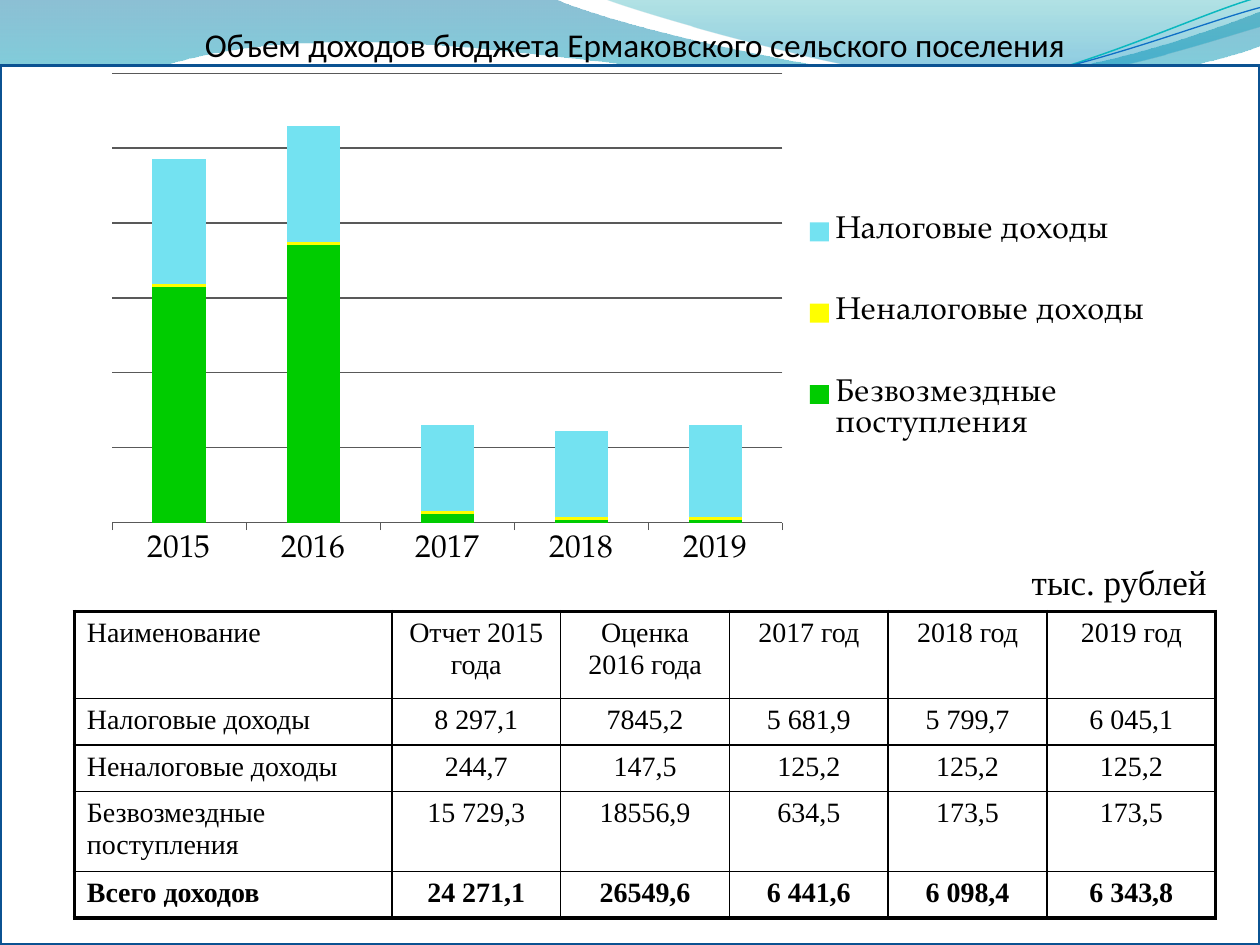
from dataclasses import dataclass
from math import cos, radians, sin
from typing import Optional

from lxml import etree
from pptx import Presentation
from pptx.chart.data import CategoryChartData
from pptx.dml.color import RGBColor
from pptx.enum.chart import XL_CHART_TYPE, XL_LEGEND_POSITION, XL_TICK_LABEL_POSITION, XL_TICK_MARK
from pptx.enum.shapes import MSO_SHAPE
from pptx.enum.text import MSO_ANCHOR, PP_ALIGN
from pptx.oxml import parse_xml
from pptx.oxml.ns import nsdecls, qn
from pptx.util import Pt

STACKED = XL_CHART_TYPE.COLUMN_STACKED
LEGEND_RIGHT = XL_LEGEND_POSITION.RIGHT
LABELS_LOW = XL_TICK_LABEL_POSITION.LOW
TICK_OUTSIDE = XL_TICK_MARK.OUTSIDE
RECTANGLE = MSO_SHAPE.RECTANGLE
MIDDLE, TOP = MSO_ANCHOR.MIDDLE, MSO_ANCHOR.TOP
LEFT, CENTER = PP_ALIGN.LEFT, PP_ALIGN.CENTER

BLACK = RGBColor(0x00, 0x00, 0x00)
WHITE = RGBColor(0xFF, 0xFF, 0xFF)
FRAME_BLUE = RGBColor(0x0B, 0x52, 0x92)
TEAL = RGBColor(0x0A, 0xB8, 0xBF)
BLUE = RGBColor(0x0F, 0x6F, 0xC6)
GRID_GREY = RGBColor(0x59, 0x59, 0x59)
GREEN = RGBColor(0x00, 0xCC, 0x00)
YELLOW = RGBColor(0xFF, 0xFF, 0x00)
SKY = RGBColor(0x73, 0xE2, 0xF1)
SERIF = "Times New Roman"

Point = tuple[float, float]
TILT = -2.7


@dataclass
class Wave:
    """An outline whose segments hold one point (a line) or three (a Bezier curve)."""
    bounds: tuple[float, float, float, float]
    start: Point
    segments: list[tuple[Point, ...]]
    stops: tuple[tuple[int, str, int], ...] = ()
    line: Optional[RGBColor] = None
    width: float = 0


@dataclass
class IncomeSeries:
    name: str
    values: list[int]
    color: RGBColor


WAVES = [
    Wave((-0.7, -0.7, 721.4, 82.1), (0, -0.7), [
        ((316.8, -0.7),),
        ((342.7, 12.2), (478.1, 45.4), (545.8, 45.4)),
        ((614.2, 45.4), (689.8, 18.7), (720, 6.5)),
        ((720.7, 25.9),),
        ((707.8, 31.7), (626.4, 54.7), (537.1, 54)),
        ((447.8, 54), (275, 20.2), (185, 24.5)),
        ((92.9, 25.2), (33.1, 59.8), (-0.7, 81.4)),
    ], stops=((0, "0074A1", 45), (100, "00C6CF", 55))),
    Wave((344.9, -0.7, 375.1, 50.4), (344.9, -0.7), [
        ((366.5, 7.9), (491, 44.6), (553.7, 46.8)),
        ((616.3, 49.7), (691.9, 23), (720, 15.1)),
        ((720, 0),),
    ], stops=((0, "00A1A9", 30), (80, "008BBF", 45))),
    Wave((-1.4, 15.8, 721.4, 51.1), (0, 79.9), [
        ((34.6, 67), (113.8, 41), (199.4, 37.4)),
        ((284.4, 33.8), (427, 64.1), (513.4, 57.6)),
        ((599.8, 51.1), (675.4, 10.8), (718.6, -1.4)),
    ], line=TEAL, width=0.85),
    Wave((-1.4, 21.6, 722.2, 41.8), (0, 74.9), [
        ((33.8, 69.1), (118.1, 43.9), (203.8, 40.3)),
        ((290.2, 36.7), (429.8, 59.8), (516.2, 54)),
        ((601.9, 48.2), (679, 15.1), (720, 4.3)),
    ], line=BLUE, width=0.75),
]

INCOME = [
    ["Наименование", "Отчет 2015 года", "Оценка 2016 года", "2017 год", "2018 год", "2019 год"],
    ["Налоговые доходы", "8 297,1", "7845,2", "5 681,9", "5 799,7", "6 045,1"],
    ["Неналоговые доходы", "244,7", "147,5", "125,2", "125,2", "125,2"],
    ["Безвозмездные поступления", "15 729,3", "18556,9", "634,5", "173,5", "173,5"],
    ["Всего доходов", "24 271,1", "26549,6", "6 441,6", "6 098,4", "6 343,8"],
]
COLUMN_WIDTHS = [181.4, 96.5, 96.5, 90.7, 90.7, 96.5]
ROW_HEIGHTS = [49.7, 26.6, 26.6, 45.4, 26.6]

YEARS = ["2015", "2016", "2017", "2018", "2019"]
SERIES = [
    IncomeSeries("Безвозмездные поступления", [85, 100, 3, 1, 1], GREEN),
    IncomeSeries("Неналоговые доходы", [1, 1, 1, 1, 1], YELLOW),
    IncomeSeries("Налоговые доходы", [45, 42, 31, 31, 33], SKY),
]


def turn(point: Point, pivot: Point, degrees: float) -> Point:
    angle = radians(degrees)
    dx, dy = point[0] - pivot[0], point[1] - pivot[1]
    return (pivot[0] + dx * cos(angle) - dy * sin(angle),
            pivot[1] + dx * sin(angle) + dy * cos(angle))


def draw_wave(slide, wave: Wave) -> None:
    """Open a freeform on the bounds, then give its path the curved segments."""
    left, top, width, height = wave.bounds
    builder = slide.shapes.build_freeform(Pt(left), Pt(top), scale=1.0)
    builder.add_line_segments([(Pt(left + width), Pt(top + height))], close=False)
    outline = builder.convert_to_shape()
    outline.shadow.inherit = False
    properties = outline.element.spPr
    curve = properties.find(".//" + qn("a:path"))
    for command in list(curve):
        curve.remove(command)
    pivot = (left + width / 2, top + height / 2)
    untilt = 0 if wave.line is None else -TILT

    def add_command(tag: str, points: tuple[Point, ...]) -> None:
        command = etree.SubElement(curve, qn(f"a:{tag}"))
        for point in points:
            x, y = turn(point, pivot, untilt)
            etree.SubElement(command, qn("a:pt"), x=str(Pt(x - left)), y=str(Pt(y - top)))

    add_command("moveTo", (wave.start,))
    for segment in wave.segments:
        add_command("lnTo" if len(segment) == 1 else "cubicBezTo", segment)
    if wave.line is not None:
        outline.rotation = TILT
        outline.fill.background()
        outline.line.color.rgb = wave.line
        outline.line.width = Pt(wave.width)
        return
    add_command("close", ())
    outline.line.fill.background()
    stops = "".join(
        f'<a:gs pos="{pos * 1000}"><a:srgbClr val="{color}">'
        f'<a:alpha val="{alpha * 1000}"/></a:srgbClr></a:gs>' for pos, color, alpha in wave.stops)
    properties.find(qn("a:custGeom")).addnext(parse_xml(
        f'<a:gradFill {nsdecls("a")} rotWithShape="1"><a:gsLst>{stops}</a:gsLst>'
        '<a:lin ang="5400000" scaled="1"/></a:gradFill>'))


def write(frame, text: str, size: float, font: str, align=LEFT, bold: bool = False) -> None:
    paragraph = frame.paragraphs[0]
    paragraph.alignment = align
    run = paragraph.add_run()
    run.text = text
    run.font.size, run.font.name, run.font.bold = Pt(size), font, bold
    run.font.color.rgb = BLACK


def add_label(slide, box: tuple[float, ...], text: str, size: float, font: str,
              align=LEFT, anchor=TOP, side_inset: float = 7.2, bottom_inset: float = 3.6) -> None:
    frame = slide.shapes.add_textbox(*map(Pt, box)).text_frame
    frame.word_wrap = True
    frame.vertical_anchor = anchor
    frame.margin_left = frame.margin_right = Pt(side_inset)
    frame.margin_bottom = Pt(bottom_inset)
    write(frame, text, size, font, align)


def set_borders(cell, widths: dict[str, float]) -> None:
    properties = cell._tc.get_or_add_tcPr()
    for index, (side, width) in enumerate(widths.items()):
        properties.insert(index, parse_xml(
            f'<a:ln{side} {nsdecls("a")} w="{Pt(width)}"><a:solidFill>'
            f'<a:srgbClr val="{BLACK}"/></a:solidFill></a:ln{side}>'))


def add_income_table(slide) -> None:
    table = slide.shapes.add_table(len(INCOME), len(COLUMN_WIDTHS), Pt(42.5), Pt(349.5),
                                   Pt(sum(COLUMN_WIDTHS)), Pt(sum(ROW_HEIGHTS))).table
    table.first_row = table.horz_banding = False
    for column, width in zip(table.columns, COLUMN_WIDTHS):
        column.width = Pt(width)
    last_row, last_column = len(INCOME) - 1, len(COLUMN_WIDTHS) - 1
    for r, (values, height) in enumerate(zip(INCOME, ROW_HEIGHTS)):
        table.rows[r].height = Pt(height)
        for c, value in enumerate(values):
            cell = table.cell(r, c)
            cell.fill.background()
            write(cell.text_frame, value, 16, SERIF, CENTER if c else LEFT, r == last_row)
            outer = {"L": c == 0, "R": c == last_column, "T": r == 0, "B": r == last_row}
            set_borders(cell, {side: 2.25 if edge else 1 for side, edge in outer.items()})


def set_layout(element, index: int, x: float, y: float, w: float, h: float, target: str) -> None:
    """Place a chart part by fractions of the chart; the layout becomes its child at index."""
    for old in element.findall(qn("c:layout")):
        element.remove(old)
    layout = etree.Element(qn("c:layout"))
    manual = etree.SubElement(layout, qn("c:manualLayout"))
    settings = {"layoutTarget": target} if target else {}
    settings |= {"xMode": "edge", "yMode": "edge", "x": x, "y": y, "w": w, "h": h}
    for tag, value in settings.items():
        etree.SubElement(manual, qn(f"c:{tag}")).set("val", str(value))
    element.insert(index, layout)


def add_income_chart(slide) -> None:
    data = CategoryChartData()
    data.categories = YEARS
    for income in SERIES:
        data.add_series(income.name, income.values)
    chart = slide.shapes.add_chart(STACKED, Pt(51.8), Pt(36), Pt(617.8), Pt(295.2), data).chart
    chart.has_title = False
    chart.font.name, chart.font.size = "TeX Gyre Pagella", Pt(18)
    chart.font.color.rgb = BLACK
    plot = chart.plots[0]
    plot.overlap, plot.gap_width, plot.vary_by_categories = 100, 150, False
    for series, income in zip(plot.series, SERIES):
        series.format.fill.solid()
        series.format.fill.fore_color.rgb = income.color
    years, amounts = chart.category_axis, chart.value_axis
    years.major_tick_mark = TICK_OUTSIDE
    years.tick_label_position = LABELS_LOW
    amounts.visible = False
    amounts.minimum_scale, amounts.maximum_scale, amounts.major_unit = 0, 162, 27
    for line in (years.format.line, amounts.major_gridlines.format.line):
        line.color.rgb = GRID_GREY
        line.width = Pt(0.75)
    chart.has_legend = True
    chart.legend.position = LEGEND_RIGHT
    chart.legend.include_in_layout = False
    set_layout(chart.legend._element, 1, 0.65, 0.2, 0.34, 0.63, "")
    set_layout(chart._chartSpace.chart.plotArea, 0, 0.02, 0.02, 0.62, 0.87, "inner")


def main() -> None:
    deck = Presentation()
    deck.slide_width, deck.slide_height = Pt(720), Pt(540)
    slide = deck.slides.add_slide(deck.slide_layouts[6])
    for wave in WAVES:
        draw_wave(slide, wave)
    panel = slide.shapes.add_shape(RECTANGLE, Pt(0), Pt(37.4), Pt(720), Pt(502.6))
    panel.shadow.inherit = False
    panel.fill.solid()
    panel.fill.fore_color.rgb = WHITE
    panel.line.color.rgb = FRAME_BLUE
    panel.line.width = Pt(2)
    add_label(slide, (36.7, -19, 652.3, 85), "Объем доходов бюджета Ермаковского сельского поселения",
              19, "Calibri", CENTER, MIDDLE, 0, 0)
    add_income_table(slide)
    add_income_chart(slide)
    add_label(slide, (582.5, 316.8, 139, 31.7), "тыс. рублей", 20, SERIF)
    deck.save("out.pptx")


if __name__ == "__main__":
    main()
